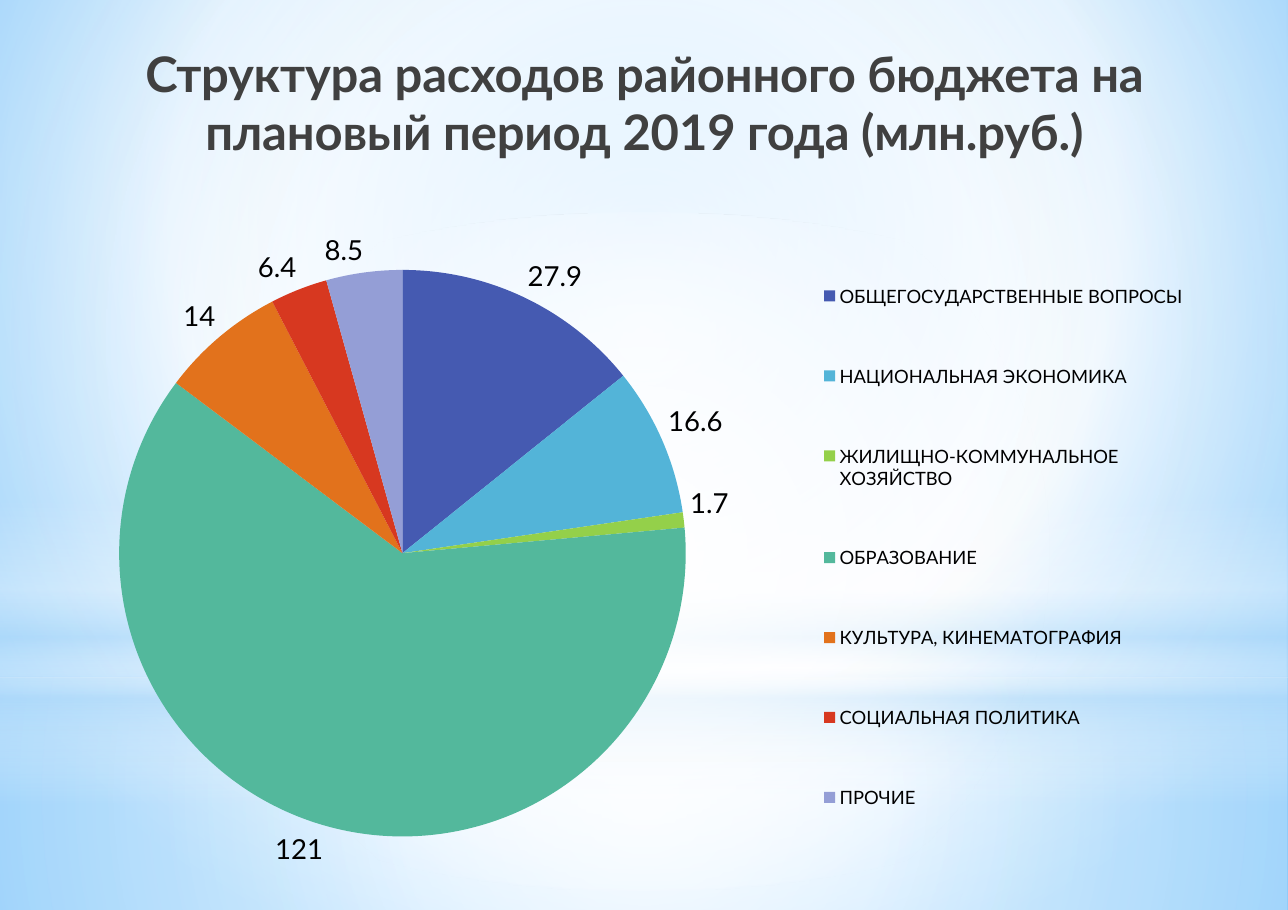
from dataclasses import dataclass

from lxml import etree
from pptx import Presentation
from pptx import util as u
from pptx.chart import data as cd
from pptx.dml.color import RGBColor
from pptx.enum import chart as ch, shapes, text
from pptx.oxml import parse_xml
from pptx.oxml.ns import nsdecls, qn

W, H = 841.7, 594.7


@dataclass(frozen=True)
class Theme:
    font: str = "Lato"
    title_size: float = 32
    label_size: float = 18
    legend_size: float = 12
    title: str = "404040"
    ink: str = "000000"
    white: str = "FFFFFF"
    pale: str = "B4DCFA"
    sky: str = "9ED5FF"
    blue: str = "5BB9FF"
    slices: tuple = ("455AB1", "53B4D8", "94D04A", "53B89C",
                     "E2721C", "D73820", "949ED6")


class Deck:
    def __init__(self, theme):
        self.t = theme
        self.prs = Presentation()
        self.prs.slide_width, self.prs.slide_height = u.Pt(W), u.Pt(H)
        self.s = self.prs.slides.add_slide(self.prs.slide_layouts[6])

    def gradient(self, solid, stops, circle=None, angle=90):
        """Replace a solid fill by stops of (position, colour, opacity)."""
        gs = "".join(
            f'<a:gs pos="{pos * 1000}"><a:srgbClr val="{c}">'
            f'<a:alpha val="{alpha * 1000}"/></a:srgbClr></a:gs>'
            for pos, c, alpha in stops)
        if circle:
            rect = " ".join(f'{k}="{v * 1000}"' for k, v in zip("ltrb", circle))
            shade = f'<a:path path="circle"><a:fillToRect {rect}/></a:path>'
        else:
            shade = f'<a:lin ang="{angle * 60000}" scaled="0"/>'
        solid.getparent().replace(solid, parse_xml(
            f'<a:gradFill {nsdecls("a")} rotWithShape="1">'
            f'<a:gsLst>{gs}</a:gsLst>{shade}</a:gradFill>'))

    def background(self, stops, circle):
        self.s.background.fill.solid()
        bg = next(self.s.element.iter(qn("p:bgPr")))
        self.gradient(bg.find(qn("a:solidFill")), stops, circle)

    def glow(self, kind, top, height, stops, circle=None):
        sp = self.s.shapes.add_shape(kind, 0, u.Pt(top), u.Pt(W), u.Pt(height))
        sp.shadow.inherit = False
        sp.line.fill.background()
        sp.fill.solid()
        spPr = sp.element.spPr
        self.gradient(spPr.find(qn("a:solidFill")), stops, circle)

    def style(self, font, size, color, bold=False):
        font.name, font.size, font.bold = self.t.font, u.Pt(size), bold
        font.color.rgb = RGBColor.from_string(color)

    def title(self, x, y, w, h, words):
        sp = self.s.shapes.add_textbox(u.Pt(x), u.Pt(y), u.Pt(w), u.Pt(h))
        tf = sp.text_frame
        tf.word_wrap = True
        tf.vertical_anchor = text.MSO_ANCHOR.MIDDLE
        p = tf.paragraphs[0]
        p.alignment = text.PP_ALIGN.CENTER
        r = p.add_run()
        r.text = words
        self.style(r.font, self.t.title_size, self.t.title, True)
        r.font._element.set("spc", "-15")

    def layout(self, parent, before, inner, **box):
        """Place the plot or legend by fractions of the chart area."""
        for old in parent.findall(qn("c:layout")):
            parent.remove(old)
        target = '<c:layoutTarget val="inner"/>' if inner else ""
        modes = "".join(f'<c:{k}Mode val="edge"/>' for k in "xy")
        vals = "".join(f'<c:{k} val="{v}"/>' for k, v in box.items())
        before.addprevious(parse_xml(
            f'<c:layout {nsdecls("c")}><c:manualLayout>{target}{modes}{vals}'
            '</c:manualLayout></c:layout>'))

    def pie(self, x, y, w, h, name, values):
        data = cd.CategoryChartData()
        data.categories = list(values)
        data.add_series(name, list(values.values()))
        chart = self.s.shapes.add_chart(
            ch.XL_CHART_TYPE.PIE, u.Pt(x), u.Pt(y), u.Pt(w), u.Pt(h), data).chart
        chart.has_title = False
        self.style(chart.font, self.t.label_size, self.t.ink)

        # Slices and their values
        plot = chart.plots[0]
        plot.vary_by_categories = True
        for i, color in enumerate(self.t.slices):
            fmt = plot.series[0].points[i].format
            fmt.fill.solid()
            fmt.fill.fore_color.rgb = RGBColor.from_string(color)
            fmt.line.fill.background()
        plot.has_data_labels = True
        labels = plot.data_labels
        labels.show_value = True
        labels.show_percentage = False
        labels.position = ch.XL_LABEL_POSITION.OUTSIDE_END
        self.style(labels.font, self.t.label_size, self.t.ink)

        # Legend
        chart.has_legend = True
        legend = chart.legend
        legend.position = ch.XL_LEGEND_POSITION.RIGHT
        legend.include_in_layout = False
        self.style(legend.font, self.t.legend_size, self.t.ink)

        # Places of plot and legend
        area = next(chart.element.iter(qn("c:plotArea")))
        self.layout(area, area.find(qn("c:pieChart")), True,
                    x=0.077, y=0.079, w=0.482, h=0.846)
        key = next(chart.element.iter(qn("c:legend")))
        self.layout(key, key.find(qn("c:overlay")), False,
                    x=0.667, y=0.015, w=0.325, h=0.955)


def main():
    t = Theme()
    d = Deck(t)
    rect, oval = shapes.MSO_SHAPE.RECTANGLE, shapes.MSO_SHAPE.OVAL
    centre = (50, 50, 50, 50)

    # Sky background with soft light
    d.background([(0, t.sky, 100), (60, t.white, 100), (100, t.blue, 100)],
                 (20, 10, 20, 60))
    d.glow(rect, 442.8, 151.9,
           [(0, t.white, 91), (37, t.white, 76), (100, t.pale, 79)], centre)
    d.glow(rect, 0, 442.8,
           [(0, t.white, 89), (48, t.white, 62), (100, t.pale, 79)], centre)
    d.glow(rect, 326.9, 198,
           [(0, t.white, 0), (29, t.white, 30), (45, t.pale, 40),
            (55, t.white, 26), (65, t.pale, 60), (100, t.white, 0)])
    d.glow(oval, 139, 442.8, [(0, t.white, 100), (56, t.white, 0)], centre)

    # Title
    d.title(25.2, 21.6, 792, 90,
            "Структура расходов районного бюджета на "
            "плановый период 2019 года (млн.руб.)")

    # Spending by section
    d.pie(18.7, 141.8, 768.2, 437.8, "Series 1", {
        "ОБЩЕГОСУДАРСТВЕННЫЕ ВОПРОСЫ": 27.9,
        "НАЦИОНАЛЬНАЯ ЭКОНОМИКА": 16.6,
        "ЖИЛИЩНО-КОММУНАЛЬНОЕ ХОЗЯЙСТВО": 1.7,
        "ОБРАЗОВАНИЕ": 121,
        "КУЛЬТУРА, КИНЕМАТОГРАФИЯ": 14,
        "СОЦИАЛЬНАЯ ПОЛИТИКА": 6.4,
        "ПРОЧИЕ": 8.5,
    })
    d.prs.save("out.pptx")


if __name__ == "__main__":
    main()
